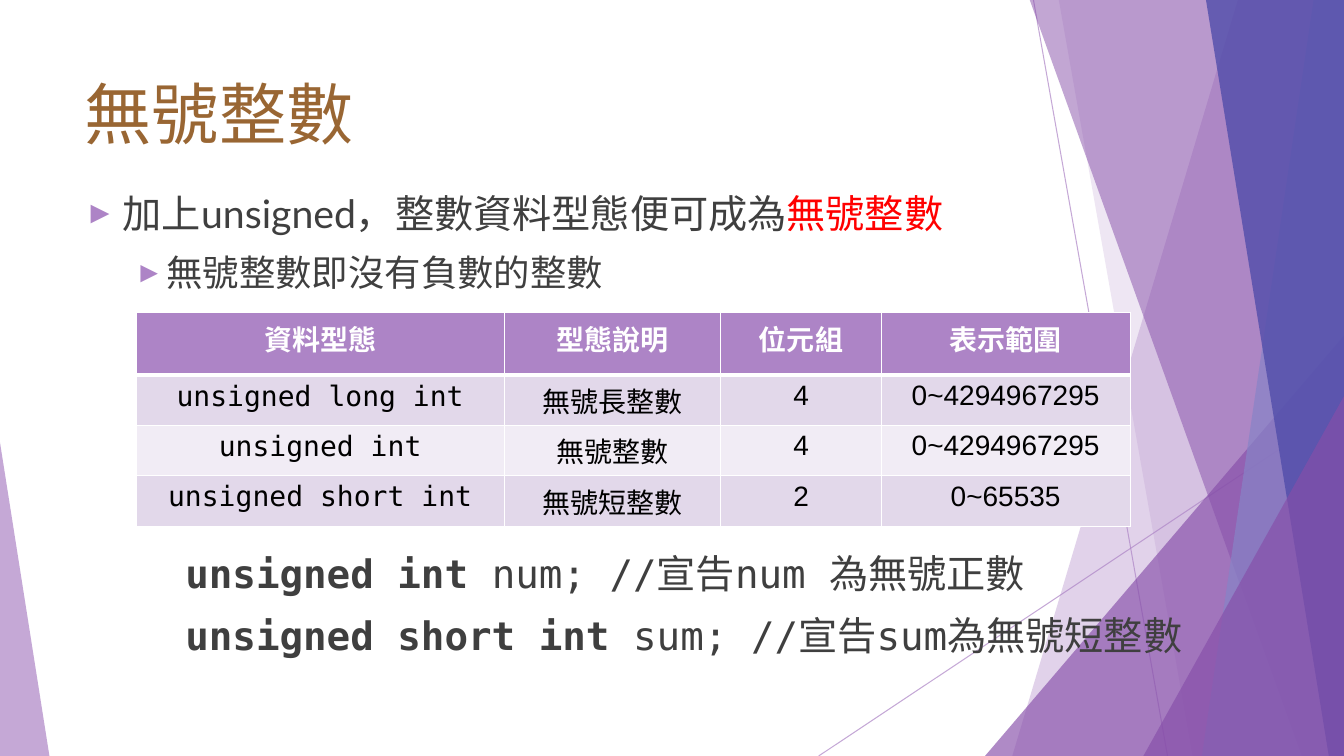
from dataclasses import dataclass

from lxml import etree
from pptx import Presentation
from pptx.dml.color import RGBColor
from pptx.enum.shapes import MSO_CONNECTOR, MSO_SHAPE
from pptx.enum.text import MSO_ANCHOR, PP_ALIGN
from pptx.oxml.ns import qn
from pptx.util import Emu, Pt

LINE = MSO_CONNECTOR.STRAIGHT
TRIANGLE = MSO_SHAPE.ISOSCELES_TRIANGLE
TOP = MSO_ANCHOR.TOP
LEFT, CENTER = PP_ALIGN.LEFT, PP_ALIGN.CENTER
PX = 9144  # 100 px to the inch


@dataclass(frozen=True)
class Theme:
    sans: str = "Lato"
    mono: str = "DejaVu Sans Mono"
    grid: str = "Arial"
    title: str = "996633"
    ink: str = "3F3F3F"
    red: str = "FF0000"
    black: str = "000000"
    white: str = "FFFFFF"
    lilac: str = "AD84C6"
    plum: str = "864EA9"
    blue: str = "8784C7"
    navy: str = "514DAA"
    bands: tuple = ("E2D8EA", "F1ECF5")
    head: int = 48
    body: int = 28
    sub: int = 26
    cell: int = 20


def px(n):
    return Emu(n * PX)


def node(parent, tag, **attrs):
    return etree.SubElement(parent, qn(tag), attrs)


def write(para, text, font, size, color, bold=False, east=True, align=LEFT):
    """Add one formatted run to a paragraph."""
    para.alignment = align
    run = para.add_run()
    run.text = text
    run.font.name, run.font.size, run.font.bold = font, Pt(size), bold
    run.font.color.rgb = RGBColor.from_string(color)
    if east:
        node(run.font._element, "a:ea", typeface=font)


class Deck:
    def __init__(self, theme):
        self.theme = theme
        self.prs = Presentation()
        self.prs.slide_width, self.prs.slide_height = px(1333), px(750)
        self.slide = self.prs.slides.add_slide(self.prs.slide_layouts[5])
        self.shapes = self.slide.shapes

    def alpha(self, shape, share):
        for tint in shape._element.iter(qn("a:srgbClr")):
            node(tint, "a:alpha", val=str(share * 1000))

    def paint(self, shape, color, share):
        shape.shadow.inherit = False
        shape.fill.solid()
        shape.fill.fore_color.rgb = RGBColor.from_string(color)
        shape.line.fill.background()
        self.alpha(shape, share)

    def line(self, x1, y1, x2, y2):
        rule = self.shapes.add_connector(LINE, px(x1), px(y1), px(x2), px(y2))
        rule.line.width = Pt(0.75)
        rule.line.color.rgb = RGBColor.from_string(self.theme.lilac)
        node(rule._element.spPr, "a:effectLst")
        self.alpha(rule, 70)

    def band(self, top, foot, color, share):
        """Fill the area from a slanted edge to the right of the slide."""
        pen = self.shapes.build_freeform(top, -1, PX)
        pen.add_line_segments([(1333, -1), (1333, 750), (foot, 750)])
        self.paint(pen.convert_to_shape(), color, share)

    def wedge(self, x, y, width, apex, color, share):
        shape = self.shapes.add_shape(
            TRIANGLE, px(x), px(y), px(width), px(750 - y))
        shape.adjustments[0] = apex
        self.paint(shape, color, share)

    def title(self, text, x, y, w, h):
        box = self.shapes.title
        box.left, box.top, box.width, box.height = map(px, (x, y, w, h))
        frame = box.text_frame
        frame.vertical_anchor = TOP
        look = self.theme
        write(frame.paragraphs[0], text, look.sans, look.head, look.title)

    def text(self, x, y, w, h, lines, font, gap, indents=None):
        """Each line is (size, runs); a run is (text, color, bold)."""
        frame = self.shapes.add_textbox(*map(px, (x, y, w, h))).text_frame
        frame.word_wrap = True
        for i, (size, runs) in enumerate(lines):
            para = frame.add_paragraph() if i else frame.paragraphs[0]
            para.space_before = Pt(gap if i else 0)
            for words, color, bold in runs:
                write(para, words, font, size, color, bold)
            if indents:
                self.bullet(para, *indents[i])

    def bullet(self, para, margin, hang):
        props = para._p.get_or_add_pPr()
        props.set("marL", str(margin * PX))
        props.set("indent", str(-hang * PX))
        tint = node(props, "a:buClr")
        node(tint, "a:srgbClr", val=self.theme.lilac)
        node(props, "a:buSzPct", val="80000")
        node(props, "a:buFont", typeface=self.theme.grid)
        node(props, "a:buChar", char="►")

    def edge(self, cell, top, bottom):
        props = cell._tc.get_or_add_tcPr()
        sides = (("L", 1), ("R", 1), ("T", top), ("B", bottom))
        for i, (side, width) in enumerate(sides):
            rim = node(props, f"a:ln{side}", w=str(Pt(width)))
            fill = node(rim, "a:solidFill")
            node(fill, "a:srgbClr", val=self.theme.white)
            props.insert(i, rim)

    def table(self, x, y, cols, rows, data):
        look = self.theme
        grid = self.shapes.add_table(
            len(rows), len(cols), px(x), px(y), px(sum(cols)), px(sum(rows))).table
        for col, width in zip(grid.columns, cols):
            col.width = px(width)
        for r, (row, height) in enumerate(zip(grid.rows, rows)):
            row.height = px(height)
            head = r == 0
            for c, (cell, words) in enumerate(zip(row.cells, data[r])):
                cell.fill.solid()
                shade = look.lilac if head else look.bands[(r - 1) % 2]
                cell.fill.fore_color.rgb = RGBColor.from_string(shade)
                self.edge(cell, 3 if r == 1 else 1, 3 if head else 1)
                font = look.mono if c == 0 and not head else look.grid
                write(cell.text_frame.paragraphs[0], words, font, look.cell,
                      look.white if head else look.black,
                      bold=head, east=False, align=CENTER)


def main():
    look = Theme()
    deck = Deck(look)

    # Slanted backdrop
    deck.line(1025, 0, 1158, 750)
    deck.line(1333, 403, 812, 750)
    deck.band(1228, 1004, look.lilac, 36)
    deck.band(1050, 1183, look.lilac, 20)
    deck.wedge(977, 333, 356, 1, look.plum, 66)
    deck.band(1021, 1291, look.plum, 50)
    deck.band(1303, 1192, look.blue, 70)
    deck.band(1196, 1318, look.navy, 80)
    deck.wedge(1134, 393, 199, 1, look.plum, 66)
    deck.wedge(0, 439, 49, 0, look.lilac, 70)

    # Title and bullets
    deck.title("無號整數", 74, 67, 1000, 83)
    points = [
        (look.body, [("加上unsigned，整數資料型態便可成為", look.ink, False),
                     ("無號整數", look.red, False)]),
        (look.sub, [("無號整數即沒有負數的整數", look.ink, False)]),
    ]
    deck.text(74, 183, 1137, 120, points, look.sans, 10, [(38, 38), (81, 31)])

    # Table of types
    deck.table(135, 310, (365, 215, 159, 247), (62, 50, 50, 50), (
        ("資料型態", "型態說明", "位元組", "表示範圍"),
        ("unsigned long int", "無號長整數", "4", "0~4294967295"),
        ("unsigned int", "無號整數", "4", "0~4294967295"),
        ("unsigned short int", "無號短整數", "2", "0~65535"),
    ))

    # Sample code
    code = [
        (look.body, [(kind, look.ink, True), (rest, look.ink, False)])
        for kind, rest in (
            ("unsigned int ", "num; //宣告num 為無號正數"),
            ("unsigned short int ", "sum; //宣告sum為無號短整數"),
        )
    ]
    deck.text(174, 540, 1070, 120, code, look.mono, 11)

    deck.prs.save("out.pptx")


if __name__ == "__main__":
    main()
